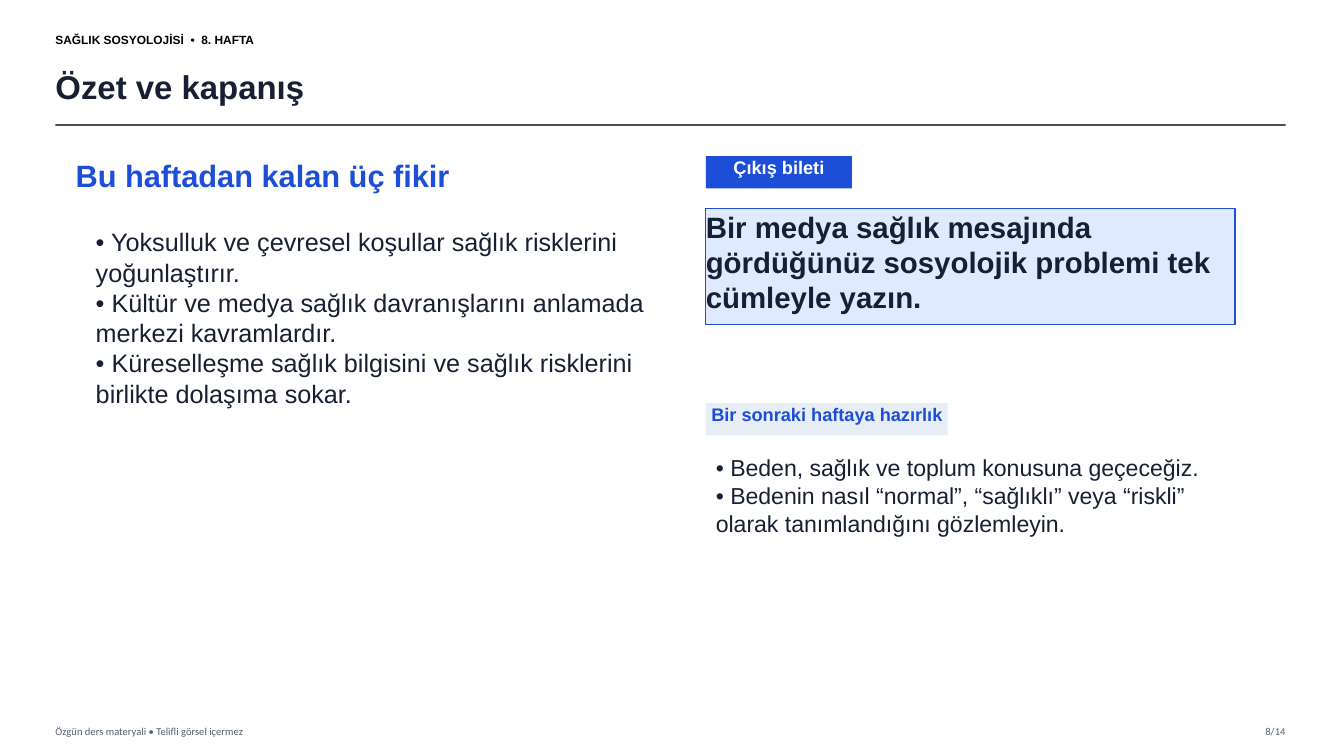
from lxml.etree import SubElement
from pptx import Presentation
from pptx.dml.color import RGBColor
from pptx.enum.shapes import MSO_CONNECTOR, MSO_SHAPE
from pptx.enum.text import MSO_ANCHOR, PP_ALIGN
from pptx.oxml.ns import qn
from pptx.util import Emu, Pt

PX = 9144  # 100 px to the inch
WIDTH, HEIGHT = 1333, 750
LEFT, RIGHT, COL = 55, 1275, 700

BLACK = RGBColor(0x00, 0x00, 0x00)
INK = RGBColor(0x17, 0x20, 0x33)
GREY = RGBColor(0x50, 0x60, 0x70)
RULE = RGBColor(0x33, 0x33, 0x33)
BLUE = RGBColor(0x1D, 0x4E, 0xD8)
PALE = RGBColor(0xDF, 0xEA, 0xFE)
MIST = RGBColor(0xE8, 0xEE, 0xF5)
WHITE = RGBColor(0xFF, 0xFF, 0xFF)

TITLE = "Özet ve kapanış"
IDEAS = [
    "• Yoksulluk ve çevresel koşullar sağlık risklerini yoğunlaştırır.",
    "• Kültür ve medya sağlık davranışlarını anlamada merkezi kavramlardır.",
    "• Küreselleşme sağlık bilgisini ve sağlık risklerini birlikte dolaşıma sokar.",
]
NEXT = [
    "• Beden, sağlık ve toplum konusuna geçeceğiz.",
    "• Bedenin nasıl “normal”, “sağlıklı” veya “riskli” olarak tanımlandığını gözlemleyin.",
]
MID, TOP = MSO_ANCHOR.MIDDLE, MSO_ANCHOR.TOP
START, END = PP_ALIGN.LEFT, PP_ALIGN.RIGHT

# box, lines, size, colour, bold, font, anchor, alignment
TEXTS = [
    ((LEFT, 25, 360, 28), ["SAĞLIK SOSYOLOJİSİ  •  8. HAFTA"],
     8.5, BLACK, True, "Arial", MID, START),
    ((LEFT, 714, 600, 22), ["Özgün ders materyali • Telifli görsel içermez"],
     7.5, GREY, False, "Calibri", MID, START),
    ((RIGHT - 65, 714, 65, 22), ["8/14"],
     7.5, GREY, False, "Calibri", MID, END),
    ((75, 155, 540, 45), ["Bu haftadan kalan üç fikir"],
     22, BLUE, True, "Arial", TOP, START),
    ((95, 225, 550, 240), IDEAS, 18, INK, False, "Arial", TOP, START),
    ((COL + 10, 450, 520, 135), NEXT, 16.5, INK, False, "Arial", TOP, START),
]
# box, text, size, colour, fill, edge, alignment
CARDS = [
    ((COL, 155, 145, 32), "Çıkış bileti", 13, WHITE, BLUE, None, PP_ALIGN.CENTER),
    ((COL, 207, 525, 115),
     "Bir medya sağlık mesajında gördüğünüz sosyolojik problemi tek cümleyle yazın.",
     21, INK, PALE, BLUE, START),
    ((COL, 400, 240, 32), "Bir sonraki haftaya hazırlık",
     13, BLUE, MIST, None, PP_ALIGN.CENTER),
]


def emu(box):
    return [Emu(n * PX) for n in box]


def write(shape, lines, size, color, bold=True, font="Arial", anchor=TOP, align=START):
    frame = shape.text_frame
    frame.word_wrap = True
    frame.vertical_anchor = anchor
    frame.margin_left = frame.margin_right = 0
    frame.margin_top = frame.margin_bottom = 0
    for i, line in enumerate(lines):
        para = frame.add_paragraph() if i else frame.paragraphs[0]
        para.alignment = align
        run = para.add_run()
        run.text = line
        run.font.name = font
        run.font.size = Pt(size)
        run.font.bold = bold
        run.font.color.rgb = color


def add_title(slide):
    title = slide.shapes.title
    title.left, title.top, title.width, title.height = emu((LEFT, 58, 1195, 55))
    write(title, [TITLE], 23.5, INK, anchor=MID)


def add_rule(slide):
    rule = slide.shapes.add_connector(
        MSO_CONNECTOR.STRAIGHT, *emu((LEFT, 124, RIGHT, 124)))
    rule.line.color.rgb = RULE
    rule.line.width = Pt(1.2)
    props = rule.element.spPr
    tint = next(props.iter(qn("a:srgbClr")))
    SubElement(tint, qn("a:alpha"), val="85000")
    SubElement(props, qn("a:effectLst"))


def add_card(slide, box, text, size, color, fill, edge, align):
    card = slide.shapes.add_shape(MSO_SHAPE.RECTANGLE, *emu(box))
    card.shadow.inherit = False
    card.fill.solid()
    card.fill.fore_color.rgb = fill
    if edge is None:
        card.line.fill.background()
    else:
        card.line.color.rgb = edge
        card.line.width = Pt(1)
    write(card, [text], size, color, align=align)


def main():
    deck = Presentation()
    deck.slide_width, deck.slide_height = emu((WIDTH, HEIGHT))
    slide = deck.slides.add_slide(deck.slide_layouts[5])
    add_title(slide)
    add_rule(slide)
    for box, *style in TEXTS:
        write(slide.shapes.add_textbox(*emu(box)), *style)
    for card in CARDS:
        add_card(slide, *card)
    deck.save("out.pptx")


if __name__ == "__main__":
    main()
